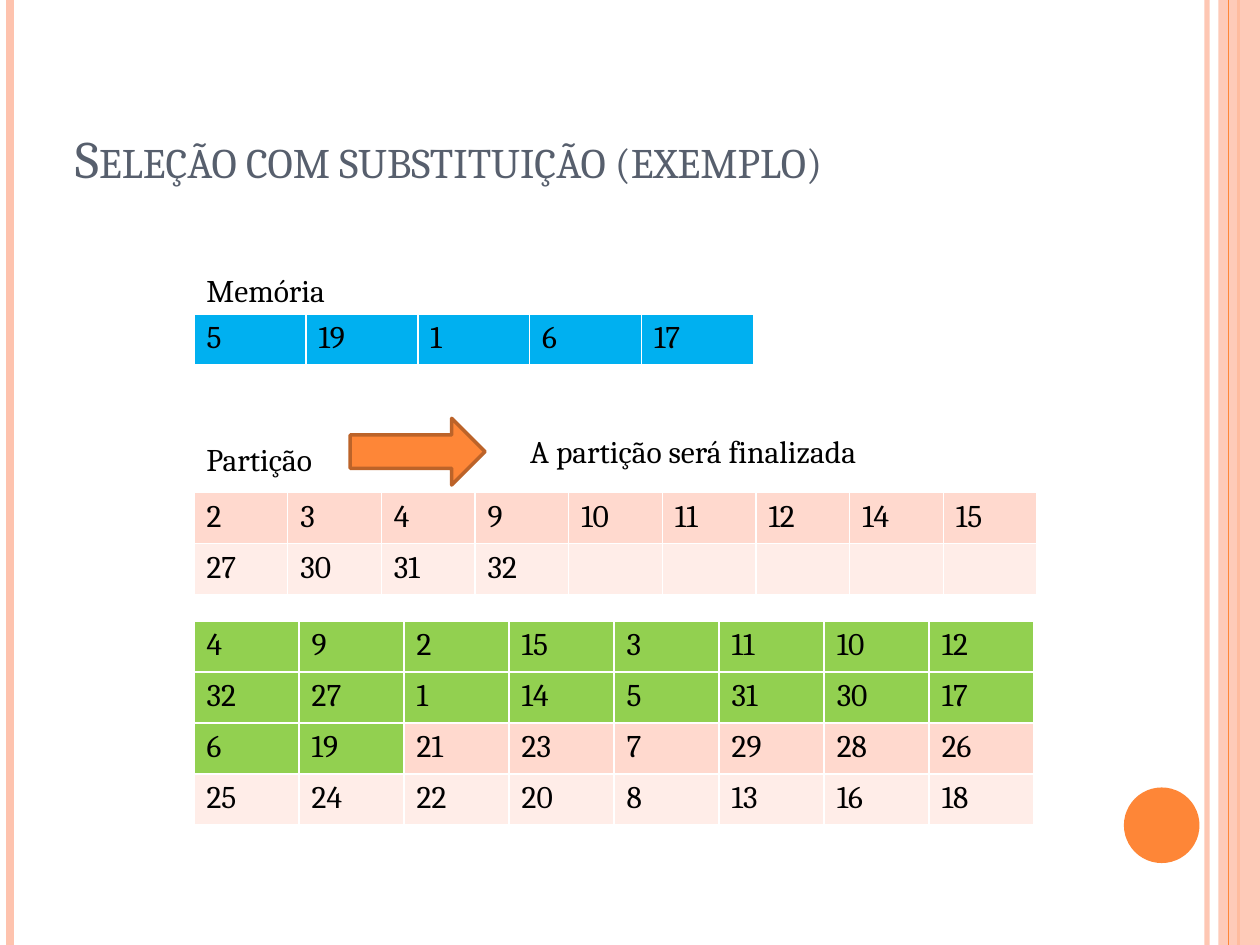
import pptx
import pptx.util
import pptx.dml.color
import pptx.enum.shapes
import pptx.enum.text
import pptx.oxml
import pptx.oxml.ns
import lxml.etree
from dataclasses import dataclass

Inches = pptx.util.Inches
Shape = pptx.enum.shapes.MSO_SHAPE
qn = pptx.oxml.ns.qn


@dataclass(frozen=True)
class Theme:
    font: str = "Cambria"
    head: int = 30
    body: int = 18
    slate: str = "575F6D"
    black: str = "000000"
    white: str = "FFFFFF"
    orange: str = "FE8637"
    rust: str = "BC6329"
    peach: str = "FEC3AE"
    blue: str = "00B0F0"
    green: str = "92D050"
    bands: tuple = ("FFD9CE", "FFEDE8")


T = Theme()
LEFT = 1.54
ROW = 0.405


def rgb(code):
    return pptx.dml.color.RGBColor.from_string(code)


def fade(node, pct):
    """Set the opacity of the colour inside a fill or line node."""
    color = next(node.iter(qn("a:srgbClr")))
    lxml.etree.SubElement(color, qn("a:alpha")).set("val", str(pct * 1000))


def add_run(para, text, size, color):
    run = para.add_run()
    run.text = text
    run.font.name = T.font
    run.font.size = pptx.util.Pt(size)
    run.font.color.rgb = rgb(color)
    return run


def add_text(slide, box, text, size=T.body, color=T.black, wrap=False):
    frame = slide.shapes.add_textbox(*map(Inches, box)).text_frame
    frame.word_wrap = wrap
    return frame, add_run(frame.paragraphs[0], text, size, color)


def add_rule(slide, x, color, width, pct=100):
    """Draw a line down the full height of the slide."""
    rule = slide.shapes.add_connector(
        pptx.enum.shapes.MSO_CONNECTOR.STRAIGHT,
        Inches(x), 0, Inches(x), Inches(7.5))
    rule.line.color.rgb = rgb(color)
    rule.line.width = pptx.util.Pt(width)
    props = rule._element.spPr
    if pct < 100:
        fade(props, pct)
    lxml.etree.SubElement(props, qn("a:effectLst"))


def add_form(slide, kind, box, fill, edge=None):
    form = slide.shapes.add_shape(kind, *map(Inches, box))
    form.shadow.inherit = False
    form.fill.solid()
    form.fill.fore_color.rgb = rgb(fill)
    if edge:
        form.line.color.rgb = rgb(edge)
        form.line.width = pptx.util.Pt(2)
    else:
        form.line.fill.background()
    return form


def add_edges(cell):
    """Put white borders of one point ahead of the cell fill."""
    props = cell._tc.get_or_add_tcPr()
    for spot, side in enumerate(("lnL", "lnR", "lnT", "lnB")):
        edge = pptx.oxml.parse_xml(
            f'<a:{side} {pptx.oxml.ns.nsdecls("a")} w="12700"><a:solidFill>'
            f'<a:srgbClr val="{T.white}"/></a:solidFill></a:{side}>')
        props.insert(spot, edge)


def add_grid(slide, top, width, rows, mark=None, done=0):
    """Add a table whose first `done` cells have the mark colour."""
    count = len(rows[0])
    table = slide.shapes.add_table(
        len(rows), count, Inches(LEFT), Inches(top),
        Inches(width), Inches(ROW * len(rows))).table
    for col in table.columns:
        col.width = Inches(width / count)
    for r, row in enumerate(rows):
        table.rows[r].height = Inches(ROW)
        for c in range(count):
            cell = table.cell(r, c)
            cell.fill.solid()
            used = r * count + c < done
            cell.fill.fore_color.rgb = rgb(mark if used else T.bands[r % 2])
            add_edges(cell)
            if c < len(row):
                add_run(cell.text_frame.paragraphs[0], str(row[c]),
                        T.body, T.black)


def add_frame(slide):
    add_rule(slide, 9.58, T.peach, 3, 93)
    add_rule(slide, 0.08, T.peach, 4.5)
    add_rule(slide, 9.83, T.orange, 1.5)
    band = add_form(slide, Shape.RECTANGLE, (9.67, 0, 0.33, 7.5), T.peach)
    fade(band._element.spPr, 87)
    add_rule(slide, 9.75, T.orange, 0.75)
    add_form(slide, Shape.OVAL, (8.92, 6.25, 0.6, 0.6), T.orange)


def main():
    deck = pptx.Presentation()
    deck.slide_width, deck.slide_height = Inches(10), Inches(7.5)
    slide = deck.slides.add_slide(deck.slide_layouts[6])

    # Side bands and disc
    add_frame(slide)

    # Title in small capitals
    frame, run = add_text(slide, (0.5, 0.3, 8.17, 1.25),
                          "Seleção com substituição (exemplo)",
                          T.head, T.slate, True)
    frame.vertical_anchor = pptx.enum.text.MSO_ANCHOR.BOTTOM
    run._r.get_or_add_rPr().set("cap", "small")

    # Input, with the records already read in green
    add_grid(slide, 4.93, 6.67, [
        (4, 9, 2, 15, 3, 11, 10, 12),
        (32, 27, 1, 14, 5, 31, 30, 17),
        (6, 19, 21, 23, 7, 29, 28, 26),
        (25, 24, 22, 20, 8, 13, 16, 18)], T.green, 18)

    # Memory and partition
    add_grid(slide, 2.49, 4.44, [(5, 19, 1, 6, 17)], T.blue, 5)
    add_grid(slide, 3.91, 6.69, [
        (2, 3, 4, 9, 10, 11, 12, 14, 15),
        (27, 30, 31, 32)])

    # Labels and arrow
    add_text(slide, (LEFT, 2.1, 1.25, 0.4), "Memória")
    add_text(slide, (LEFT, 3.44, 1.18, 0.4), "Partição")
    add_form(slide, Shape.RIGHT_ARROW, (2.78, 3.32, 1.07, 0.53),
             T.orange, T.rust)
    add_text(slide, (4.11, 3.38, 3.21, 0.4), "A partição será finalizada")

    deck.save("out.pptx")


if __name__ == "__main__":
    main()
